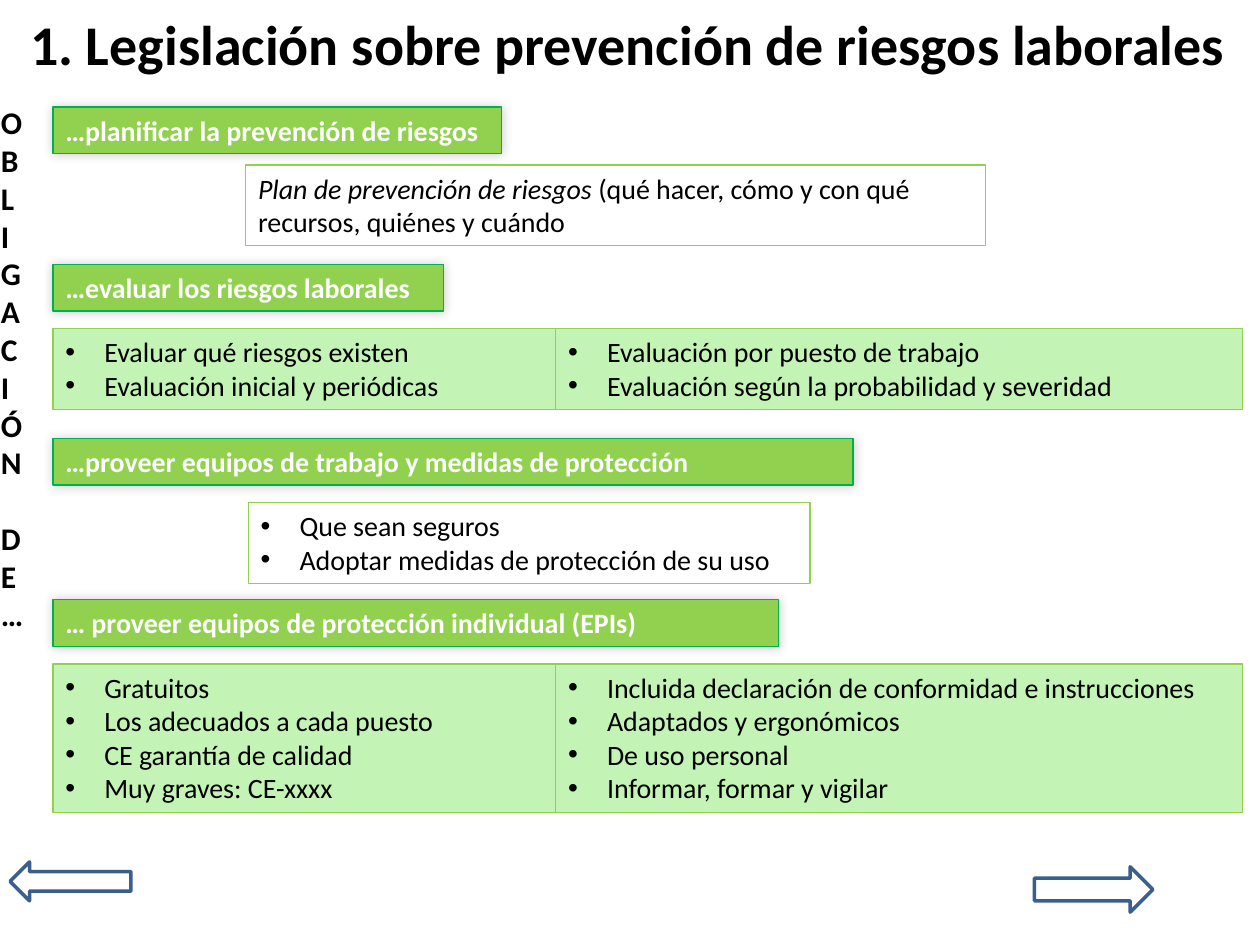
import pptx
import pptx.util
import pptx.dml.color
import pptx.enum.shapes
import pptx.enum.text
from lxml import etree
from pptx.dml.color import RGBColor
from pptx.util import Inches

BLACK = RGBColor(0x00, 0x00, 0x00)
WHITE = RGBColor(0xFF, 0xFF, 0xFF)
LIME = RGBColor(0x92, 0xD0, 0x50)
GREEN = RGBColor(0x00, 0xB0, 0x50)
PALE_GREEN = RGBColor(0xC3, 0xF4, 0xB6)
BLUE = RGBColor(0x3A, 0x5F, 0x8C)

Shape = pptx.enum.shapes.MSO_SHAPE
Align = pptx.enum.text.PP_ALIGN
Anchor = pptx.enum.text.MSO_ANCHOR
AutoSize = pptx.enum.text.MSO_AUTO_SIZE
qn = pptx.oxml.ns.qn


class SlideBuilder:
    font_name = "Calibri"
    body_size = 16
    bullet_indent = Inches(0.31)

    def __init__(self, slide):
        self.slide = slide

    def style(self, font, size, color, bold=False):
        font.name = self.font_name
        font.size = pptx.util.Pt(size)
        font.color.rgb = color
        font.bold = bold

    def label(self, text, left, top, width, height, size):
        box = self.slide.shapes.add_textbox(
            Inches(left), Inches(top), Inches(width), Inches(height))
        frame = box.text_frame
        frame.word_wrap = True
        frame.text = text
        self.style(frame.paragraphs[0].runs[0].font, size, BLACK, True)
        return frame

    def vertical_label(self, text, left, top, width, height, size):
        frame = self.label(text, left, top, width, height, size)
        frame.auto_size = AutoSize.SHAPE_TO_FIT_TEXT
        frame._txBody.bodyPr.set("vert", "wordArtVert")

    def outline(self, kind, left, top, width, height, line, line_width, fill=None):
        shape = self.slide.shapes.add_shape(
            kind, Inches(left), Inches(top), Inches(width), Inches(height))
        shape.shadow.inherit = False
        if fill is None:
            shape.fill.background()
        else:
            shape.fill.solid()
            shape.fill.fore_color.rgb = fill
        shape.line.color.rgb = line
        shape.line.width = pptx.util.Pt(line_width)
        return shape

    def box(self, lines, left, top, width, height, fill=None, line=LIME,
            color=BLACK, bold=False):
        shape = self.outline(Shape.RECTANGLE, left, top, width, height, line, 0.75, fill)
        frame = shape.text_frame
        frame.word_wrap = True
        frame.auto_size = AutoSize.SHAPE_TO_FIT_TEXT
        frame.vertical_anchor = Anchor.TOP
        frame.text = "\n".join(lines)
        for paragraph in frame.paragraphs:
            paragraph.alignment = Align.LEFT
            for run in paragraph.runs:
                self.style(run.font, self.body_size, color, bold)
        return shape

    def heading(self, text, top, width):
        shape = self.box([text], 0.42, top, width, 0.37, LIME, GREEN, WHITE, True)
        # Soft shadow around the heading
        effects = shape._element.spPr.find(qn("a:effectLst"))
        shadow = etree.SubElement(effects, qn("a:outerShdw"), blurRad=str(pptx.util.Pt(6)),
                                  dist="0", dir=str(225 * 60000))
        tint = etree.SubElement(shadow, qn("a:srgbClr"), val=str(BLACK))
        etree.SubElement(tint, qn("a:alpha"), val="20000")

    def bullets(self, items, left, top, width, height, fill=None):
        shape = self.box(items, left, top, width, height, fill)
        for paragraph in shape.text_frame.paragraphs:
            properties = paragraph._p.get_or_add_pPr()
            properties.set("marL", str(self.bullet_indent))
            properties.set("indent", str(-self.bullet_indent))
            etree.SubElement(properties, qn("a:buFont"), typeface="Arial")
            etree.SubElement(properties, qn("a:buChar"), char="•")

    def arrow(self, kind, left, top, width, height):
        self.outline(kind, left, top, width, height, BLUE, 2)


def main():
    deck = pptx.Presentation()
    deck.slide_width, deck.slide_height = Inches(10), Inches(7.5)
    builder = SlideBuilder(deck.slides.add_slide(deck.slide_layouts[6]))

    # Title and vertical label
    title = builder.label("1. Legislación sobre prevención de riesgos laborales",
                          0.14, 0.03, 9.86, 0.63, 32)
    title.vertical_anchor = Anchor.MIDDLE
    builder.vertical_label("OBLIGACIÓN DE…", -0.09, 0.77, 0.56, 5.69, 18)

    # Headings of the four obligations
    for text, top, width in [
        ("…planificar la prevención de riesgos", 0.85, 3.56),
        ("…evaluar los riesgos laborales", 2.1, 3.1),
        ("…proveer equipos de trabajo y medidas de protección", 3.48, 6.35),
        ("… proveer equipos de protección individual (EPIs)", 4.76, 5.76),
    ]:
        builder.heading(text, top, width)

    # Prevention plan, its name in italics
    plan = builder.box(["Plan de prevención de riesgos "], 1.95, 1.31, 5.87, 0.64)
    sentence = plan.text_frame.paragraphs[0]
    sentence.runs[0].font.italic = True
    details = sentence.add_run()
    details.text = "(qué hacer, cómo y con qué recursos, quiénes y cuándo"
    builder.style(details.font, builder.body_size, BLACK)

    # Safe work equipment
    builder.bullets(["Que sean seguros", "Adoptar medidas de protección de su uso"],
                    1.97, 3.99, 4.46, 0.64)

    # Paired lists: risk assessment and protective equipment
    for top, height, left_items, right_items in [
        (2.61, 0.64,
         ["Evaluar qué riesgos existen", "Evaluación inicial y periódicas"],
         ["Evaluación por puesto de trabajo",
          "Evaluación según la probabilidad y severidad"]),
        (5.27, 1.18,
         ["Gratuitos", "Los adecuados a cada puesto", "CE garantía de calidad",
          "Muy graves: CE-xxxx"],
         ["Incluida declaración de conformidad e instrucciones",
          "Adaptados y ergonómicos", "De uso personal", "Informar, formar y vigilar"]),
    ]:
        builder.bullets(left_items, 0.42, top, 3.99, height, PALE_GREEN)
        builder.bullets(right_items, 4.41, top, 5.45, height, PALE_GREEN)

    # Navigation arrows
    builder.arrow(Shape.LEFT_ARROW, 0.08, 6.84, 0.96, 0.31)
    builder.arrow(Shape.RIGHT_ARROW, 8.21, 6.88, 0.94, 0.36)

    deck.save("out.pptx")


if __name__ == "__main__":
    main()
